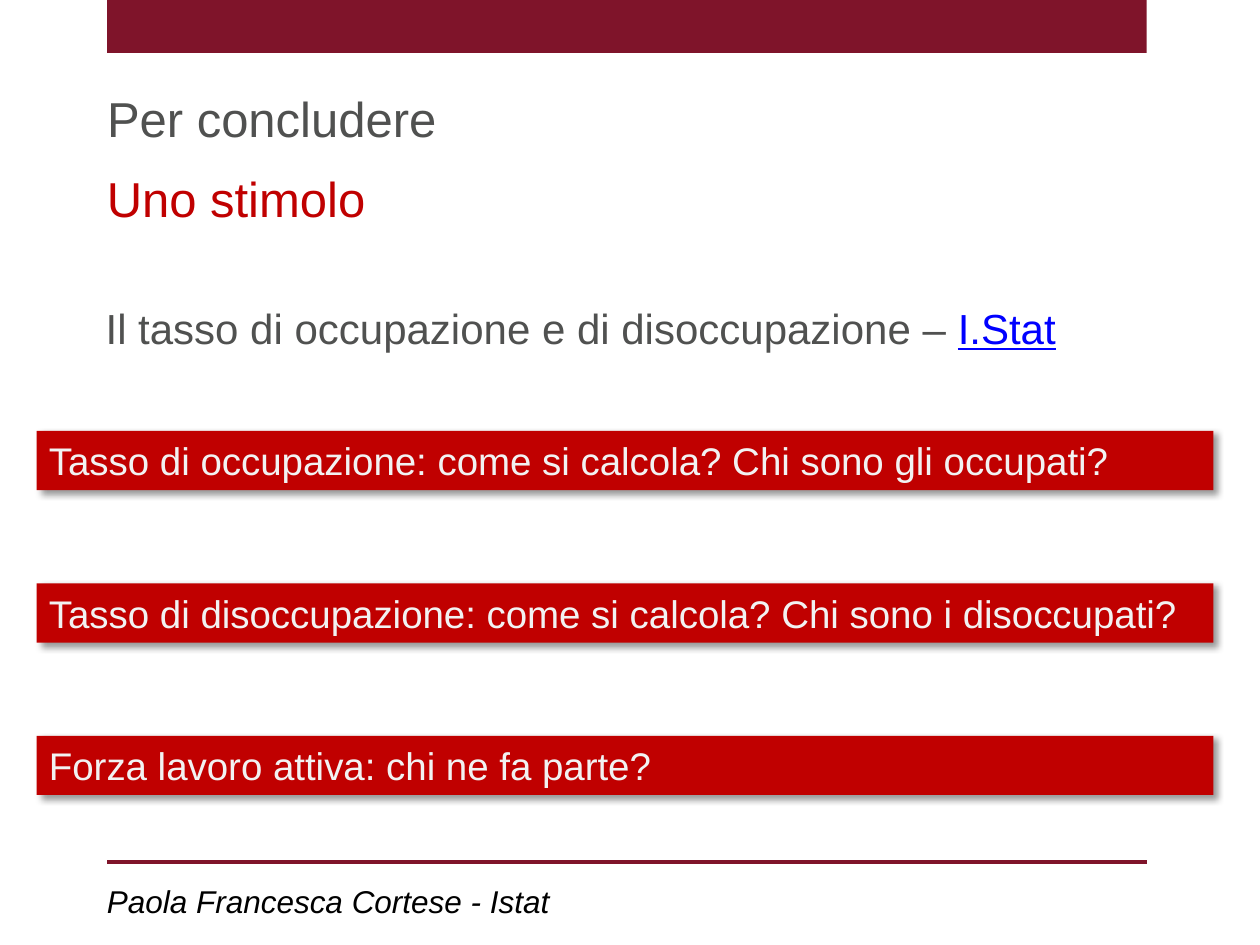
from lxml import etree
from pptx import Presentation
from pptx.dml.color import RGBColor
from pptx.enum.shapes import MSO_CONNECTOR, MSO_SHAPE
from pptx.enum.text import MSO_ANCHOR, MSO_AUTO_SIZE, PP_ALIGN
from pptx.oxml import parse_xml
from pptx.oxml.ns import nsdecls, qn
from pptx.util import Inches, Pt

# Content
TITLE = "Per concludere"
SUBTITLE = "Uno stimolo"
TOPIC = "Il tasso di occupazione e di disoccupazione – "
SOURCE = "I.Stat"
QUESTIONS = [
    "Tasso di occupazione: come si calcola? Chi sono gli occupati?",
    "Tasso di disoccupazione: come si calcola? Chi sono i disoccupati?",
    "Forza lavoro attiva: chi ne fa parte?",
]
AUTHOR = "Paola Francesca Cortese - Istat"

# Style
FONT = "Arial"
COLORS = {
    "band": "7F142A", "red": "C00000", "grey": "505150",
    "light": "F2F2F2", "link": "0000FF", "black": "000000",
}
LEFT, RIGHT = 0.85, 9.1
QUESTION_TOP, QUESTION_STEP = 3.42, 1.21
SHADOW = (
    f'<a:effectLst {nsdecls("a")}>'
    '<a:outerShdw blurRad="50800" dist="38100" dir="2700000" algn="tl" rotWithShape="0">'
    '<a:srgbClr val="000000"><a:alpha val="40000"/></a:srgbClr>'
    '</a:outerShdw></a:effectLst>'
)


def color(name):
    return RGBColor.from_string(COLORS[name])


def add_span(para, text, size, ink, italic=False, underline=False):
    span = para.add_run()
    span.text = text
    font = span.font
    font.name, font.size, font.color.rgb = FONT, Pt(size), color(ink)
    font.bold, font.italic, font.underline = False, italic, underline


def write(box, text, **style):
    """Fill a box with one left-aligned line and return its paragraph."""
    frame = box.text_frame
    frame.word_wrap = True
    frame.auto_size = MSO_AUTO_SIZE.NONE
    frame.vertical_anchor = MSO_ANCHOR.TOP
    para = frame.paragraphs[0]
    para.alignment = PP_ALIGN.LEFT
    add_span(para, text, **style)
    return para


def add_text(page, place, text, **style):
    return write(page.shapes.add_textbox(*map(Inches, place)), text, **style)


def add_bar(page, place, fill):
    bar = page.shapes.add_shape(MSO_SHAPE.RECTANGLE, *map(Inches, place))
    bar.shadow.inherit = False
    bar.fill.solid()
    bar.fill.fore_color.rgb = color(fill)
    bar.line.fill.background()
    return bar


def main():
    deck = Presentation()
    deck.slide_width, deck.slide_height = Inches(10), Inches(7.5)
    page = deck.slides.add_slide(deck.slide_layouts[5])

    # Top band and footer rule
    add_bar(page, (LEFT, 0, RIGHT - LEFT, 0.42), "band")
    rule = page.shapes.add_connector(
        MSO_CONNECTOR.STRAIGHT, Inches(LEFT), Inches(6.84), Inches(RIGHT), Inches(6.84))
    rule.line.color.rgb = color("band")
    rule.line.width = Pt(2)
    etree.SubElement(rule._element.spPr, qn("a:effectLst"))

    # Headings
    title = page.shapes.title
    title.left, title.top, title.width, title.height = map(Inches, (0.75, 0.65, 8.24, 0.57))
    write(title, TITLE, size=28, ink="grey")
    add_text(page, (0.75, 1.29, 9.17, 0.57), SUBTITLE, size=28, ink="red")

    # Topic with its data source
    topic = add_text(page, (0.74, 2.35, 8.13, 0.5), TOPIC, size=24, ink="grey")
    add_span(topic, SOURCE, size=24, ink="link", underline=True)

    # Question bars
    for row, question in enumerate(QUESTIONS):
        top = QUESTION_TOP + row * QUESTION_STEP
        bar = add_bar(page, (0.29, top, 9.34, 0.47), "red")
        properties = bar._element.spPr
        properties.replace(properties.find(qn("a:effectLst")), parse_xml(SHADOW))
        write(bar, question, size=22, ink="light")

    # Footer
    add_text(page, (0.75, 6.95, 5.83, 0.4), AUTHOR, size=18, ink="black", italic=True)

    deck.save("out.pptx")


if __name__ == "__main__":
    main()
